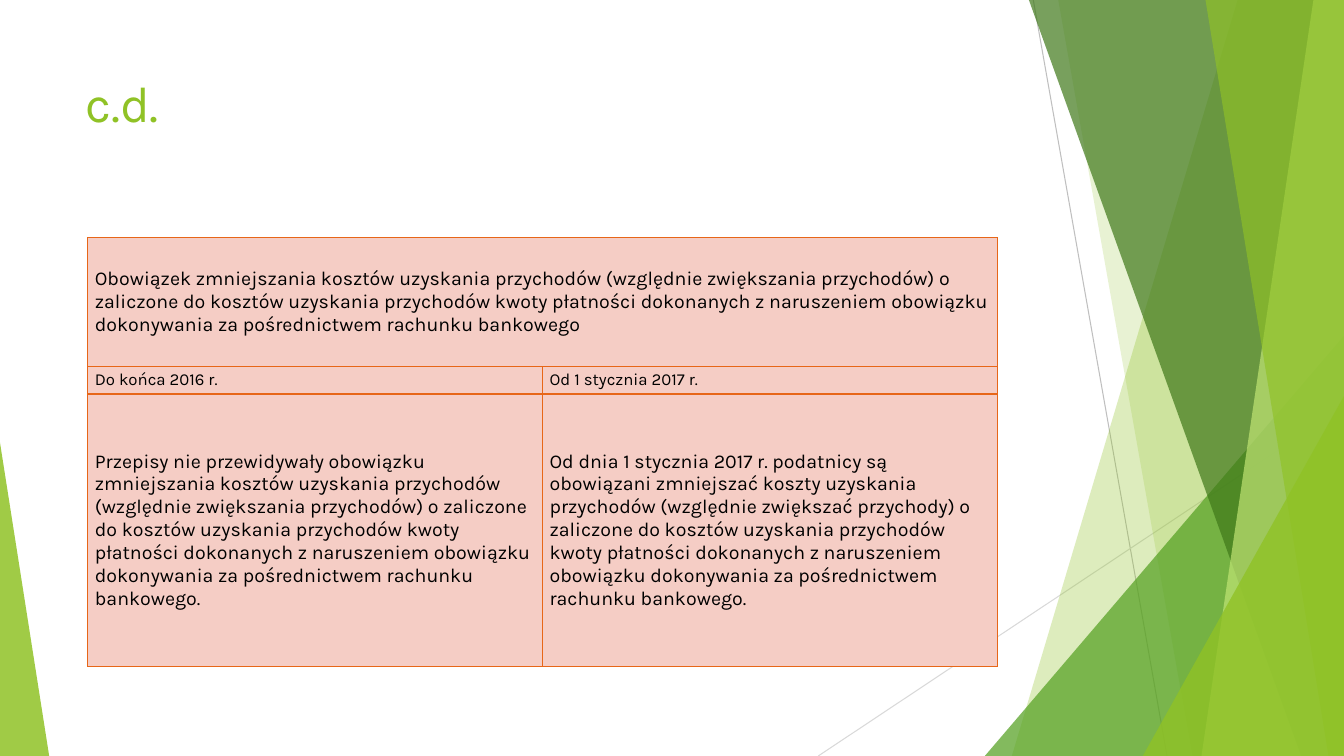
from dataclasses import dataclass

from lxml.etree import SubElement
from pptx import Presentation
from pptx.dml.color import RGBColor
from pptx.enum.shapes import MSO_CONNECTOR, MSO_SHAPE
from pptx.enum.text import MSO_ANCHOR as Anchor, MSO_AUTO_SIZE as AutoSize, PP_ALIGN as Align
from pptx.oxml.ns import qn
from pptx.util import Cm, Pt

LIME = RGBColor(0x90, 0xC2, 0x26)
LEAF = RGBColor(0x54, 0xA0, 0x21)
FOREST = RGBColor(0x3F, 0x78, 0x19)
PALE_LIME = RGBColor(0xC0, 0xE4, 0x74)
GREY = RGBColor(0xBF, 0xBF, 0xBF)
LIGHT_GREY = RGBColor(0xD9, 0xD9, 0xD9)
ORANGE = RGBColor(0xE7, 0x66, 0x18)
PINK = RGBColor(0xF5, 0xCD, 0xC5)
BLACK = RGBColor(0, 0, 0)

FONT = "Karla"
WIDTH, HEIGHT = 33.87, 19.05
COLUMN_WIDTH = 11.46
ROW_HEIGHTS = (3.25, 0.69, 6.86)


@dataclass(frozen=True)
class Ray:
    start: tuple[float, float]
    end: tuple[float, float]
    color: RGBColor


@dataclass(frozen=True)
class Facet:
    top_x: float
    bottom_x: float
    color: RGBColor
    opacity: int


@dataclass(frozen=True)
class Corner:
    left: float
    top: float
    width: float
    apex: float
    color: RGBColor
    opacity: int


@dataclass(frozen=True)
class Entry:
    row: int
    column: int
    text: str
    size: int


RAYS = (
    Ray((26.04, 0), (29.41, HEIGHT), GREY),
    Ray((WIDTH, 10.24), (20.62, HEIGHT), LIGHT_GREY),
)
PANELS = (
    Facet(31.19, 25.5, LIME, 30),
    Facet(26.67, 30.05, LIME, 20),
    Corner(24.82, 8.46, 9.05, 1, LEAF, 72),
    Facet(25.93, 32.79, FOREST, 70),
    Facet(33.1, 30.28, PALE_LIME, 70),
    Facet(30.38, 33.48, LIME, 65),
    Corner(28.8, 9.98, 5.07, 1, LIME, 80),
    Corner(0, 11.15, 1.24, 0, LIME, 85),
)
ENTRIES = (
    Entry(0, 0, "Obowiązek zmniejszania kosztów uzyskania przychodów (względnie "
          "zwiększania przychodów) o zaliczone do kosztów uzyskania przychodów kwoty "
          "płatności dokonanych z naruszeniem obowiązku dokonywania za pośrednictwem "
          "rachunku bankowego", 14),
    Entry(1, 0, "Do końca 2016 r.", 12),
    Entry(1, 1, "Od 1 stycznia 2017 r.", 12),
    Entry(2, 0, "Przepisy nie przewidywały obowiązku zmniejszania kosztów uzyskania "
          "przychodów (względnie zwiększania przychodów) o zaliczone do kosztów "
          "uzyskania przychodów kwoty płatności dokonanych z naruszeniem obowiązku "
          "dokonywania za pośrednictwem rachunku bankowego.", 14),
    Entry(2, 1, "Od dnia 1 stycznia 2017 r. podatnicy są obowiązani zmniejszać koszty "
          "uzyskania przychodów (względnie zwiększać przychody) o zaliczone do kosztów "
          "uzyskania przychodów kwoty płatności dokonanych z naruszeniem obowiązku "
          "dokonywania za pośrednictwem rachunku bankowego.", 14),
)


def write(frame, text: str, *, size: int, color: RGBColor) -> None:
    para = frame.paragraphs[0]
    para.alignment = Align.LEFT
    span = para.add_run()
    span.text = text
    span.font.name = FONT
    span.font.size = Pt(size)
    span.font.bold = False
    span.font.color.rgb = color


def draw_ray(page, ray: Ray) -> None:
    line = page.shapes.add_connector(
        MSO_CONNECTOR.STRAIGHT, *(Cm(value) for value in ray.start + ray.end))
    line.line.color.rgb = ray.color
    line.line.width = Pt(0.75)
    SubElement(line._element.spPr, qn("a:effectLst"))


def draw_panel(page, panel: Facet | Corner) -> None:
    if isinstance(panel, Facet):
        builder = page.shapes.build_freeform(Cm(panel.top_x), 0)
        builder.add_line_segments([
            (Cm(WIDTH), 0), (Cm(WIDTH), Cm(HEIGHT)), (Cm(panel.bottom_x), Cm(HEIGHT))])
        shape = builder.convert_to_shape()
    else:
        shape = page.shapes.add_shape(
            MSO_SHAPE.ISOSCELES_TRIANGLE, Cm(panel.left), Cm(panel.top),
            Cm(panel.width), Cm(HEIGHT - panel.top))
        shape.adjustments[0] = panel.apex
    shape.shadow.inherit = False
    shape.line.fill.background()
    shape.fill.solid()
    shape.fill.fore_color.rgb = panel.color
    tint = shape._element.spPr.find(qn("a:solidFill"))[0]
    SubElement(tint, qn("a:alpha"), val=str(panel.opacity * 1000))


def format_cell(cell) -> None:
    properties = cell._tc.get_or_add_tcPr()
    for side in ("lnL", "lnR", "lnT", "lnB"):
        border = SubElement(properties, qn(f"a:{side}"), w=str(Pt(1)))
        SubElement(SubElement(border, qn("a:solidFill")), qn("a:srgbClr"), val=str(ORANGE))
    cell.fill.solid()
    cell.fill.fore_color.rgb = PINK
    cell.vertical_anchor = Anchor.MIDDLE
    cell.margin_left = cell.margin_right = Cm(0.18)
    cell.margin_top = cell.margin_bottom = Cm(0.08)


def draw_table(page) -> None:
    table = page.shapes.add_table(
        len(ROW_HEIGHTS), 2, Cm(2.21), Cm(5.99),
        Cm(2 * COLUMN_WIDTH), Cm(sum(ROW_HEIGHTS))).table
    table.first_row = table.horz_banding = False
    for column in table.columns:
        column.width = Cm(COLUMN_WIDTH)
    for row, height in zip(table.rows, ROW_HEIGHTS):
        row.height = Cm(height)
    for cell in table.iter_cells():
        format_cell(cell)
    table.cell(0, 0).merge(table.cell(0, 1))
    for entry in ENTRIES:
        write(table.cell(entry.row, entry.column).text_frame, entry.text,
              size=entry.size, color=BLACK)


def draw_title(page) -> None:
    title = page.shapes.title
    title.left, title.top = Cm(1.89), Cm(1.7)
    title.width, title.height = Cm(23.88), Cm(3.67)
    title.text_frame.auto_size = AutoSize.NONE
    title.text_frame.vertical_anchor = Anchor.TOP
    write(title.text_frame, "c.d.", size=36, color=LIME)


def main() -> None:
    deck = Presentation()
    deck.slide_width, deck.slide_height = Cm(WIDTH), Cm(HEIGHT)
    page = deck.slides.add_slide(deck.slide_layouts[5])
    for ray in RAYS:
        draw_ray(page, ray)
    for panel in PANELS:
        draw_panel(page, panel)
    draw_title(page)
    draw_table(page)
    deck.save("out.pptx")


if __name__ == "__main__":
    main()
